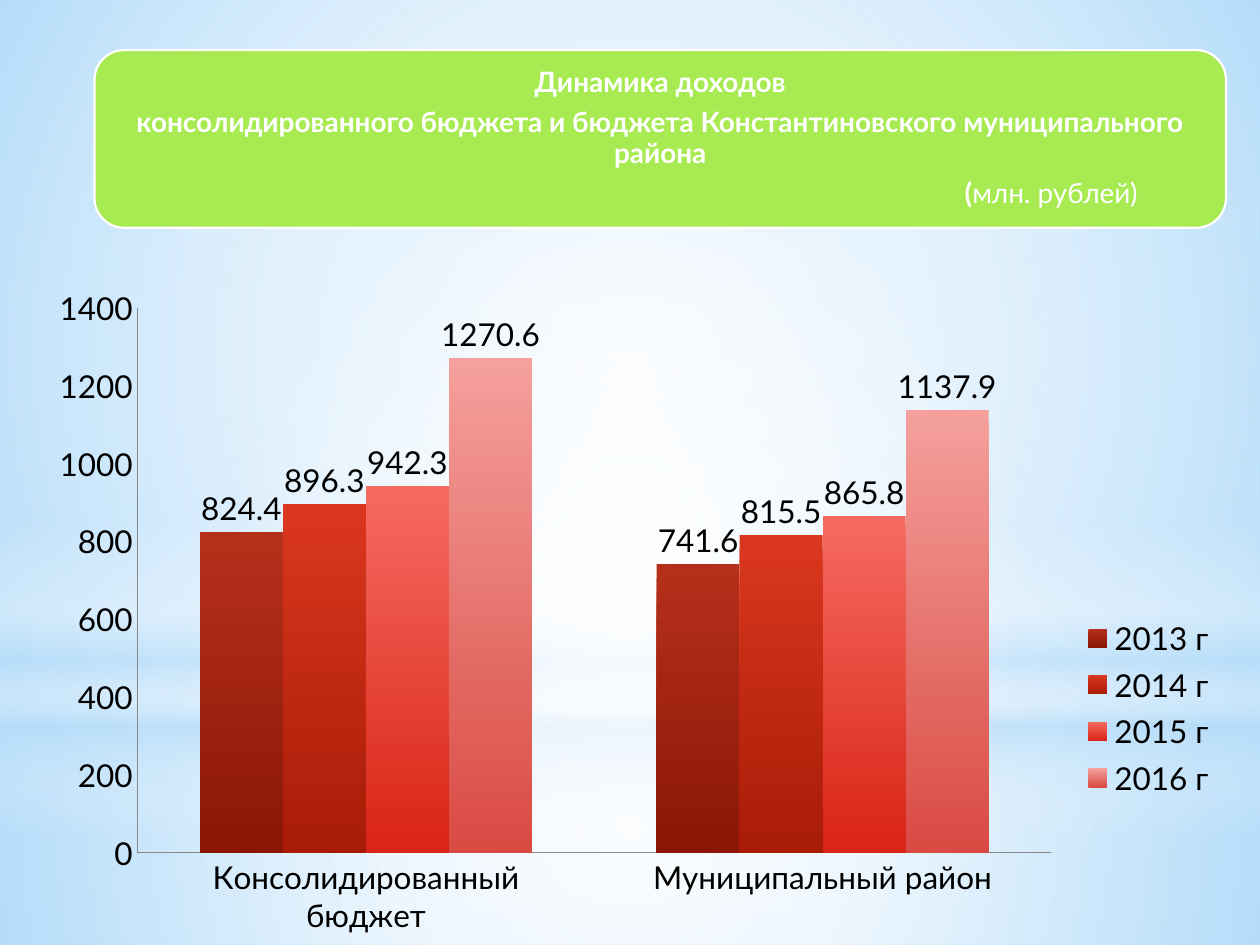
"""Build the budget revenue slide with a clustered column chart."""
from typing import Any, NamedTuple

from lxml import etree
from pptx import Presentation, util as u
from pptx.chart.data import CategoryChartData
from pptx.dml.color import RGBColor
from pptx.enum import chart as charts, shapes, text
from pptx.oxml.ns import qn

WHITE = RGBColor(0xFF, 0xFF, 0xFF)
BLACK = RGBColor(0, 0, 0)
SKY = RGBColor(0xB4, 0xDC, 0xFA)
LIME = RGBColor(0xA7, 0xEA, 0x52)
GREY = RGBColor(0x89, 0x89, 0x89)
FONT = "Lato"
WIDTH, HEIGHT = u.Inches(10), u.Inches(7.5)


class Area(NamedTuple):
    """Left, top, width and height as shares of a whole."""
    left: float
    top: float
    width: float
    height: float


class Stop(NamedTuple):
    """A gradient stop: position and opacity in percent."""
    position: int
    color: RGBColor
    opacity: int = 100


class Glow(NamedTuple):
    """A translucent layer of the backdrop."""
    area: Area
    stops: tuple[Stop, ...]
    radial: bool = True
    kind: Any = shapes.MSO_SHAPE.RECTANGLE


class Year(NamedTuple):
    """One chart series with its column gradient."""
    name: str
    values: tuple[float, float]
    top: RGBColor
    bottom: RGBColor


class Line(NamedTuple):
    """One heading line as (text, bold) spans."""
    spans: tuple[tuple[str, bool], ...]
    align: Any = text.PP_ALIGN.CENTER
    right_margin: float = 0


GLOWS = (
    Glow(Area(0, 0.744, 1, 0.256),
         (Stop(0, WHITE, 91), Stop(37, WHITE, 76), Stop(100, SKY, 79))),
    Glow(Area(0, 0, 1, 0.744),
         (Stop(0, WHITE, 89), Stop(48, WHITE, 62), Stop(100, SKY, 79))),
    Glow(Area(0, 0.55, 1, 0.333),
         (Stop(0, WHITE, 0), Stop(29, WHITE, 30), Stop(45, SKY, 40),
          Stop(55, WHITE, 26), Stop(65, SKY, 60), Stop(100, WHITE, 0)), False),
    Glow(Area(0, 0.233, 1, 0.744), (Stop(0, WHITE), Stop(56, WHITE, 0)),
         kind=shapes.MSO_SHAPE.OVAL),
)
HEADING_AREA = Area(0.075, 0.053, 0.898, 0.188)
HEADING = (
    Line((("Динамика доходов", True),)),
    Line((("консолидированного бюджета и бюджета Константиновского "
           "муниципального района", True),)),
    Line((("(", True), ("млн. рублей)", False)), text.PP_ALIGN.RIGHT, 0.63),
)
CHART_AREA = Area(0.028, 0.292, 0.945, 0.709)
PLOT_AREA = Area(0.086, 0.048, 0.767, 0.813)
LEGEND_AREA = Area(0.875, 0.5, 0.12, 0.29)
CATEGORIES = ("Консолидированный бюджет", "Муниципальный район")
YEARS = (
    Year("2013 г", (824.4, 741.6), RGBColor(0xB5, 0x30, 0x1B), RGBColor(0x8B, 0x16, 0x05)),
    Year("2014 г", (896.3, 815.5), RGBColor(0xDA, 0x37, 0x1E), RGBColor(0xA8, 0x1C, 0x07)),
    Year("2015 г", (942.3, 865.8), RGBColor(0xF5, 0x6A, 0x60), RGBColor(0xD9, 0x24, 0x16)),
    Year("2016 г", (1270.6, 1137.9), RGBColor(0xF5, 0xA0, 0x9C), RGBColor(0xD9, 0x4A, 0x43)),
)


def apply(target: Any, **values: Any) -> None:
    """Set several attributes of one object."""
    for name, value in values.items():
        setattr(target, name, value)


def frame(area: Area) -> tuple[int, ...]:
    """Turn shares of the slide into lengths."""
    return tuple(int(share * size) for share, size in zip(area, (WIDTH, HEIGHT) * 2))


def add_node(parent: Any, tag: str, **values: Any) -> Any:
    """Append an XML child with attributes."""
    return etree.SubElement(parent, qn(tag), {key: str(value) for key, value in values.items()})


def set_gradient(fill: Any, properties: Any, stops: tuple[Stop, ...], radial: bool = False) -> None:
    """Fill with a radial or a top-to-bottom gradient."""
    fill.solid()
    gradient = etree.Element(qn("a:gradFill"), rotWithShape="1")
    stop_list = add_node(gradient, "a:gsLst")
    for stop in stops:
        node = add_node(stop_list, "a:gs", pos=stop.position * 1000)
        color = add_node(node, "a:srgbClr", val=stop.color)
        add_node(color, "a:alpha", val=stop.opacity * 1000)
    if radial:
        shade = add_node(gradient, "a:path", path="circle")
        add_node(shade, "a:fillToRect", l=50000, t=50000, r=50000, b=50000)
    else:
        add_node(gradient, "a:lin", ang=5400000, scaled=0)
    properties.replace(properties.find(qn("a:solidFill")), gradient)


def make_layout(area: Area, inner: bool = False) -> Any:
    """Make a manual layout for a chart part."""
    layout = etree.Element(qn("c:layout"))
    manual = add_node(layout, "c:manualLayout")
    if inner:
        add_node(manual, "c:layoutTarget", val="inner")
    for tag in ("c:xMode", "c:yMode"):
        add_node(manual, tag, val="edge")
    for tag, share in zip(("c:x", "c:y", "c:w", "c:h"), area):
        add_node(manual, tag, val=share)
    return layout


def add_glow(page: Any, glow: Glow) -> None:
    """Draw one backdrop layer."""
    shape = page.shapes.add_shape(glow.kind, *frame(glow.area))
    shape.shadow.inherit = False
    shape.line.fill.background()
    set_gradient(shape.fill, shape._element.spPr, glow.stops, glow.radial)


def add_heading(page: Any) -> None:
    """Draw the rounded panel and put the title on it."""
    panel = page.shapes.add_shape(shapes.MSO_SHAPE.ROUNDED_RECTANGLE, *frame(HEADING_AREA))
    panel.shadow.inherit = False
    panel.fill.solid()
    panel.fill.fore_color.rgb = LIME
    panel.line.color.rgb = WHITE
    panel.line.width = u.Pt(1.25)
    title = page.shapes.title
    page.shapes._spTree.append(title._element)
    apply(title, **dict(zip(("left", "top", "width", "height"), frame(HEADING_AREA))))
    box = title.text_frame
    inset = u.Inches(0.07)
    apply(box, word_wrap=True, auto_size=text.MSO_AUTO_SIZE.NONE,
          vertical_anchor=text.MSO_ANCHOR.MIDDLE, margin_left=inset,
          margin_right=inset, margin_top=inset, margin_bottom=inset)
    for index, line in enumerate(HEADING):
        para = box.add_paragraph() if index else box.paragraphs[0]
        apply(para, alignment=line.align, line_spacing=0.9,
              space_before=u.Pt(0), space_after=u.Pt(5.6))
        para._p.get_or_add_pPr().set("marR", str(u.Inches(line.right_margin)))
        for words, bold in line.spans:
            span = para.add_run()
            span.text = words
            apply(span.font, name=FONT, size=u.Pt(16), bold=bold)
            span.font.color.rgb = WHITE


def add_revenue_chart(page: Any) -> None:
    """Draw the revenue columns by year."""
    data = CategoryChartData()
    data.categories = CATEGORIES
    for year in YEARS:
        data.add_series(year.name, year.values)
    chart = page.shapes.add_chart(charts.XL_CHART_TYPE.COLUMN_CLUSTERED,
                                  *frame(CHART_AREA), data).chart
    apply(chart, has_title=False, has_legend=True)
    apply(chart.font, name=FONT, size=u.Pt(18))
    chart.font.color.rgb = BLACK
    apply(chart.legend, position=charts.XL_LEGEND_POSITION.RIGHT, include_in_layout=False)
    chart.legend._element.find(qn("c:overlay")).addprevious(make_layout(LEGEND_AREA))
    plot = chart.plots[0]
    apply(plot, gap_width=150, overlap=0, vary_by_categories=False, has_data_labels=True)
    apply(plot.data_labels, show_value=True, position=charts.XL_LABEL_POSITION.OUTSIDE_END)
    for series, year in zip(plot.series, YEARS):
        set_gradient(series.format.fill, series._element.spPr,
                     (Stop(0, year.top), Stop(100, year.bottom)))
    for axis in (chart.category_axis, chart.value_axis):
        apply(axis, has_major_gridlines=False, major_tick_mark=charts.XL_TICK_MARK.NONE)
        axis.format.line.color.rgb = GREY
    apply(chart.value_axis, minimum_scale=0, maximum_scale=1400, major_unit=200)
    plot_area = plot._element.getparent()
    for old in plot_area.findall(qn("c:layout")):
        plot_area.remove(old)
    plot_area.insert(0, make_layout(PLOT_AREA, inner=True))


def main() -> None:
    """Assemble and save the deck."""
    deck = Presentation()
    apply(deck, slide_width=WIDTH, slide_height=HEIGHT)
    page = deck.slides.add_slide(deck.slide_layouts[5])
    page.background.fill.solid()
    page.background.fill.fore_color.rgb = SKY
    for glow in GLOWS:
        add_glow(page, glow)
    add_heading(page)
    add_revenue_chart(page)
    deck.save("out.pptx")


if __name__ == "__main__":
    main()
